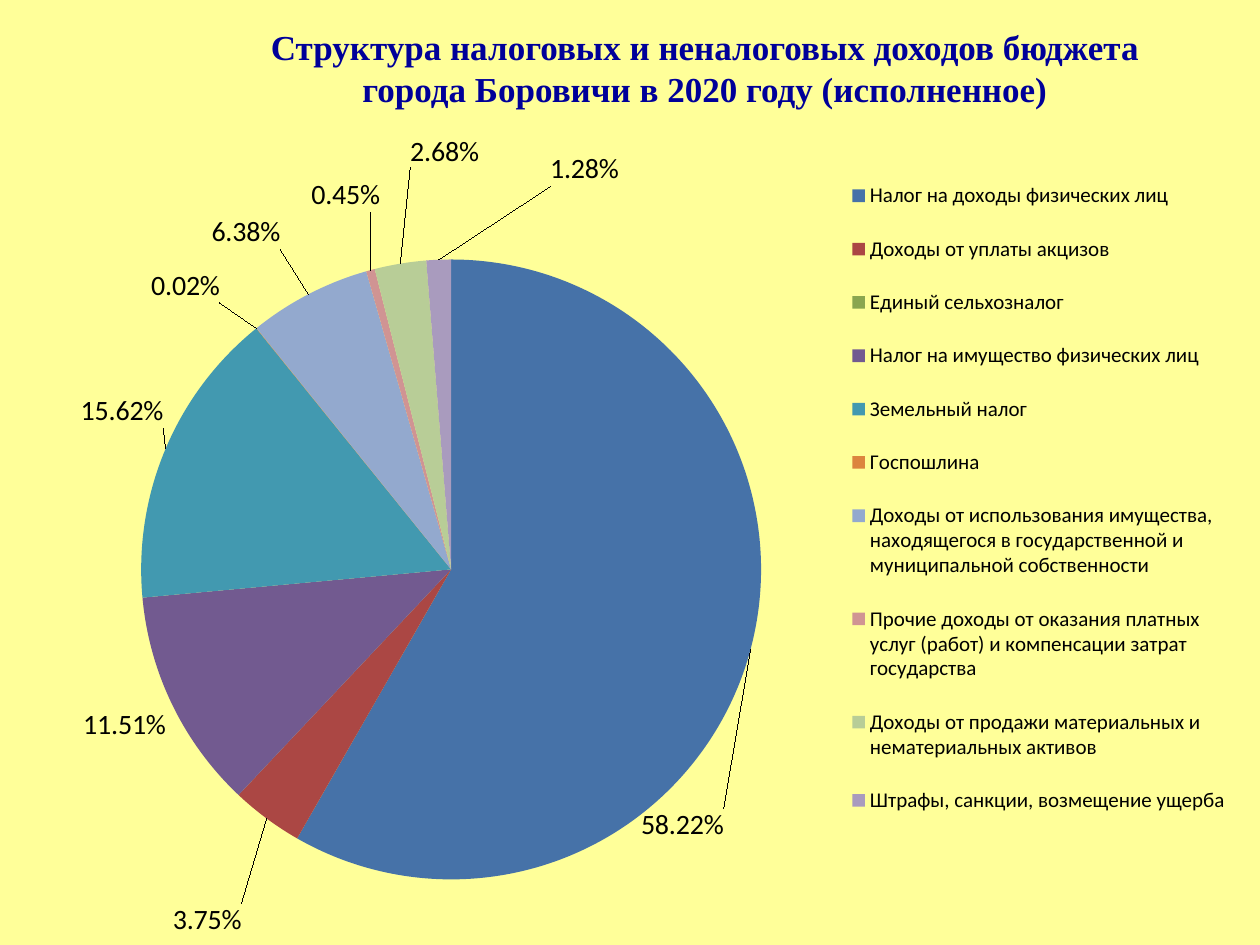
import math

from lxml import etree
from pptx import Presentation
from pptx import util as u
from pptx.chart.data import CategoryChartData
from pptx.dml.color import RGBColor
from pptx.enum import chart as ch, text
from pptx.oxml.ns import qn

TITLE = ["Структура налоговых и неналоговых доходов бюджета",
         "города Боровичи в 2020 году (исполненное)"]
# category, share, colour, label centre on the slide (None: beside its slice)
INCOME = [
    ("Налог на доходы физических лиц", 0.5822, "4672A8", (5.4, 6.57)),
    ("Доходы от уплаты акцизов", 0.0375, "AB4744", (1.64, 7.29)),
    ("Единый сельхозналог", 0, "8AA64F", None),
    ("Налог на имущество физических лиц", 0.1151, "725A90", None),
    ("Земельный налог", 0.1562, "4299B0", (0.98, 3.25)),
    ("Госпошлина", 0.0002, "DC853E", (1.47, 2.28)),
    ("Доходы от использования имущества, находящегося в государственной и "
     "муниципальной собственности", 0.0638, "93A9CE", (1.94, 1.86)),
    ("Прочие доходы от оказания платных услуг (работ) и компенсации затрат "
     "государства", 0.0045, "D09493", (2.72, 1.57)),
    ("Доходы от продажи материальных и нематериальных активов",
     0.0268, "B8CD97", (3.5, 1.22)),
    ("Штрафы, санкции, возмещение ущерба", 0.0128, "A99BBE", (4.33, 1.37)),
]
CHART = (0.39, 1.07, 9.61, 6.6)
CENTRE, RADIUS = (3.58, 4.52), 2.46
LEGEND = (6.68, 1.23, 3.13, 5.45)
PERCENT = "0.00%"


def rgb(value):
    return RGBColor.from_string(value)


def set_font(font, **values):
    color = values.pop("color", "000000")
    for name, value in values.items():
        setattr(font, name, value)
    font.color.rgb = rgb(color)


def manual_layout(**values):
    layout = etree.Element(qn("c:layout"))
    manual = etree.SubElement(layout, qn("c:manualLayout"))
    for name, value in values.items():
        value = value if isinstance(value, str) else f"{value:.4f}"
        etree.SubElement(manual, qn("c:" + name), val=value)
    return layout


def area_layout(left, top, width, height, **target):
    """Layout of a slide area given in inches, as fractions of the chart."""
    x, y, w, h = CHART
    return manual_layout(**target, xMode="edge", yMode="edge",
                         x=(left - x) / w, y=(top - y) / h,
                         w=width / w, h=height / h)


def label_offset(share, middle, target):
    """Shift from the outside-end place of a label to its target centre."""
    angle = 2 * math.pi * middle
    dx, dy = math.sin(angle), -math.cos(angle)
    half_width = 0.37 if share >= 0.1 else 0.31
    x = CENTRE[0] + RADIUS * dx + math.copysign(half_width, dx)
    y = CENTRE[1] + RADIUS * dy + math.copysign(0.17, dy)
    return manual_layout(x=(target[0] - x) / CHART[2],
                         y=(target[1] - y) / CHART[3])


prs = Presentation()
prs.slide_width, prs.slide_height = u.Inches(10), u.Inches(7.5)
s = prs.slides.add_slide(prs.slide_layouts[5])
s.background.fill.solid()
s.background.fill.fore_color.rgb = rgb("FFFF99")

title = s.shapes.title
title.left, title.top, title.width, title.height = map(
    u.Inches, (1.46, 0.15, 8.27, 0.77))
tf = title.text_frame
tf.text = "\n".join(TITLE)
tf.word_wrap = True
tf.auto_size = text.MSO_AUTO_SIZE.NONE
tf.vertical_anchor = text.MSO_ANCHOR.TOP
for p in tf.paragraphs:
    p.alignment = text.PP_ALIGN.CENTER
    set_font(p.runs[0].font, name="Times New Roman", size=u.Pt(20),
             bold=True, color="000099")

data = CategoryChartData(number_format=PERCENT)
data.categories = [row[0] for row in INCOME]
data.add_series("Series 1", [row[1] for row in INCOME])
chart = s.shapes.add_chart(ch.XL_CHART_TYPE.PIE, *map(u.Inches, CHART), data).chart
chart.has_title = False
set_font(chart.font, name="Calibri", size=u.Pt(10))

chart.has_legend = True
legend = chart.legend
legend.position = ch.XL_LEGEND_POSITION.RIGHT
legend.include_in_layout = False
set_font(legend.font, name="Calibri", size=u.Pt(12))
legend_xml = chart.element.find(".//" + qn("c:legend"))
legend_xml.find(qn("c:legendPos")).addnext(area_layout(*LEGEND))

plot_area = chart.element.find(".//" + qn("c:plotArea"))
for old in plot_area.findall(qn("c:layout")):
    plot_area.remove(old)
plot_area.insert(0, area_layout(CENTRE[0] - RADIUS, CENTRE[1] - RADIUS,
                                2 * RADIUS, 2 * RADIUS, layoutTarget="inner"))

plot = chart.plots[0]
plot.vary_by_categories = True
series = plot.series[0]
labels = series.data_labels
labels.show_value = True
labels.number_format, labels.number_format_is_linked = PERCENT, False
labels.position = ch.XL_LABEL_POSITION.OUTSIDE_END
set_font(labels.font, name="Calibri", size=u.Pt(16))

total = sum(row[1] for row in INCOME)
start = 0
for i, (_, share, color, target) in enumerate(INCOME):
    point = series.points[i]
    point.format.fill.solid()
    point.format.fill.fore_color.rgb = rgb(color)
    if target:
        label = point.data_label
        set_font(label.font, name="Calibri", size=u.Pt(16))
        label.position = ch.XL_LABEL_POSITION.OUTSIDE_END
        label_xml = series.data_labels._element.findall(qn("c:dLbl"))[-1]
        idx = label_xml.find(qn("c:idx"))
        number = etree.Element(qn("c:numFmt"), formatCode=PERCENT, sourceLinked="0")
        idx.addnext(number)
        idx.addnext(label_offset(share, (start + share / 2) / total, target))
    start += share

prs.save("out.pptx")
